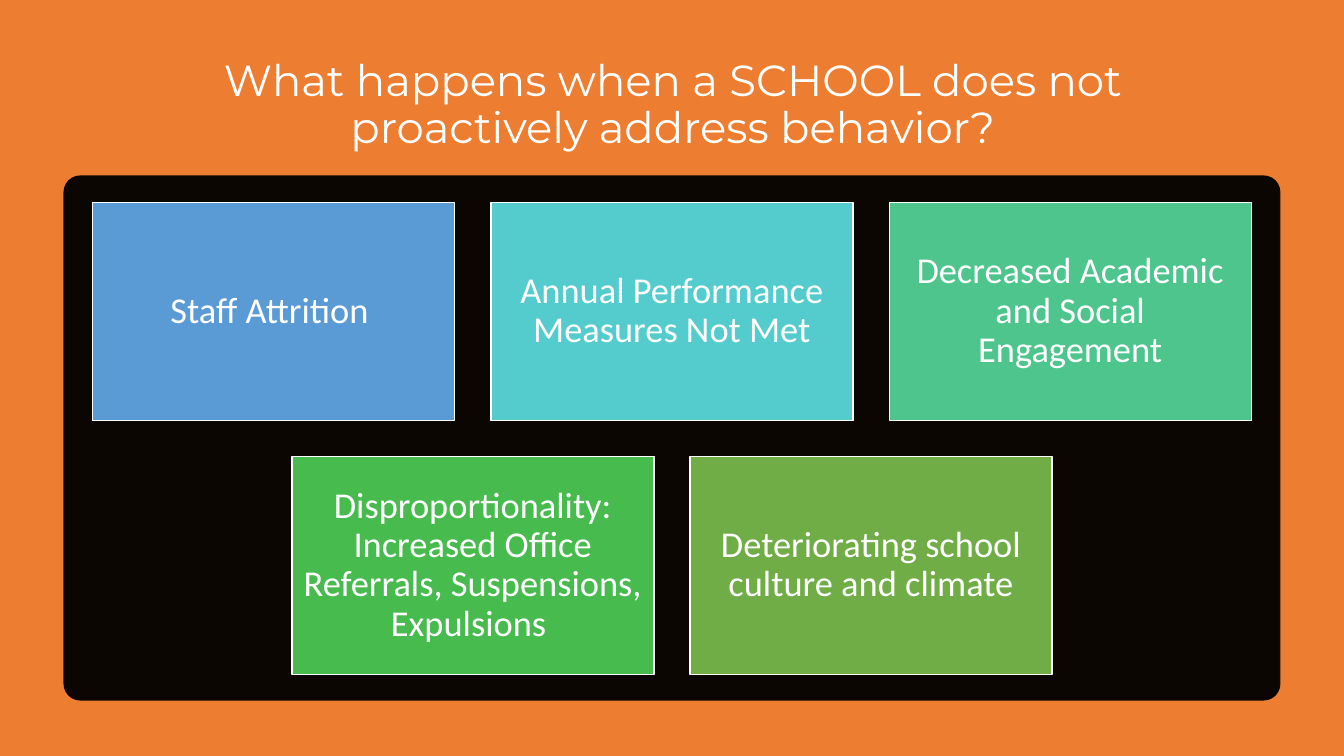
from lxml import etree
from pptx import Presentation
from pptx.dml.color import RGBColor
from pptx.enum.shapes import MSO_SHAPE as Shape
from pptx.enum.text import MSO_ANCHOR as Anchor, PP_ALIGN as Align
from pptx.oxml.ns import qn
from pptx.util import Inches, Pt

SLIDE_WIDTH, SLIDE_HEIGHT = 13.33, 7.5
CARD_WIDTH, CARD_HEIGHT, GAP = 3.59, 2.16, 0.36
FIRST_ROW_TOP = 2.01
CONSEQUENCE_ROWS = [
    [("Staff Attrition ", "5B9BD5"),
     ("Annual Performance Measures Not Met", "54CCCD"),
     ("Decreased Academic and Social Engagement", "4DC58D")],
    [("Disproportionality: Increased Office Referrals, Suspensions, Expulsions ", "48BB4F"),
     ("Deteriorating school culture and climate", "70AD47")],
]


def color(hex_string):
    return RGBColor.from_string(hex_string)


class SlideBuilder:
    white, black, orange = "FFFFFF", "000000", "ED7D31"
    title_font, body_font = "Montserrat", "Calibri"

    def __init__(self, slide):
        self.slide = slide
        background = slide.background.fill
        background.solid()
        background.fore_color.rgb = color(self.black)

    def set_text(self, frame, text, font, size):
        """Fill a text frame with one centred white run."""
        frame.word_wrap = True
        frame.vertical_anchor = Anchor.MIDDLE
        paragraph = frame.paragraphs[0]
        paragraph.alignment = Align.CENTER
        paragraph.line_spacing = 0.9
        run = paragraph.add_run()
        run.text = text
        run.font.name = font
        run.font.size = Pt(size)
        run.font.color.rgb = color(self.white)

    def block(self, kind, left, top, width, height, fill):
        shape = self.slide.shapes.add_shape(
            kind, Inches(left), Inches(top), Inches(width), Inches(height))
        shape.shadow.inherit = False
        shape.fill.solid()
        shape.fill.fore_color.rgb = color(fill)
        shape.line.fill.background()
        return shape

    def title(self, text):
        heading = self.slide.shapes.title
        heading.left, heading.top = Inches(0.92), Inches(0.5)
        heading.width, heading.height = Inches(11.5), Inches(1.1)
        self.set_text(heading.text_frame, text, self.title_font, 31)

    def backdrop(self):
        """Cover the slide in orange, behind the title."""
        cover = self.block(Shape.RECTANGLE, 0, 0, SLIDE_WIDTH, SLIDE_HEIGHT, self.orange)
        self.slide.shapes.title.element.addprevious(cover.element)

    def panel(self):
        """Draw the slightly transparent rounded panel behind the cards."""
        panel = self.block(Shape.ROUNDED_RECTANGLE, 0.63, 1.74, 12.07, 5.21, self.black)
        panel.adjustments[0] = 0.032
        fill_color = panel.element.spPr.find(qn("a:solidFill"))[0]
        etree.SubElement(fill_color, qn("a:alpha"), val="95000")

    def card(self, left, top, text, fill):
        card = self.block(Shape.RECTANGLE, left, top, CARD_WIDTH, CARD_HEIGHT, fill)
        card.line.color.rgb = color(self.white)
        card.line.width = Pt(1)
        frame = card.text_frame
        frame.margin_left = frame.margin_right = Inches(0.11)
        frame.margin_top = frame.margin_bottom = Inches(0.11)
        self.set_text(frame, text, self.body_font, 26)


def main():
    deck = Presentation()
    deck.slide_width, deck.slide_height = Inches(SLIDE_WIDTH), Inches(SLIDE_HEIGHT)
    builder = SlideBuilder(deck.slides.add_slide(deck.slide_layouts[5]))
    builder.backdrop()
    builder.title("What happens when a SCHOOL does not proactively address behavior?")
    builder.panel()
    for row, consequences in enumerate(CONSEQUENCE_ROWS):
        row_width = len(consequences) * (CARD_WIDTH + GAP) - GAP
        row_left = (SLIDE_WIDTH - row_width) / 2
        top = FIRST_ROW_TOP + row * (CARD_HEIGHT + GAP)
        for column, (text, fill) in enumerate(consequences):
            builder.card(row_left + column * (CARD_WIDTH + GAP), top, text, fill)
    deck.save("out.pptx")


if __name__ == "__main__":
    main()
